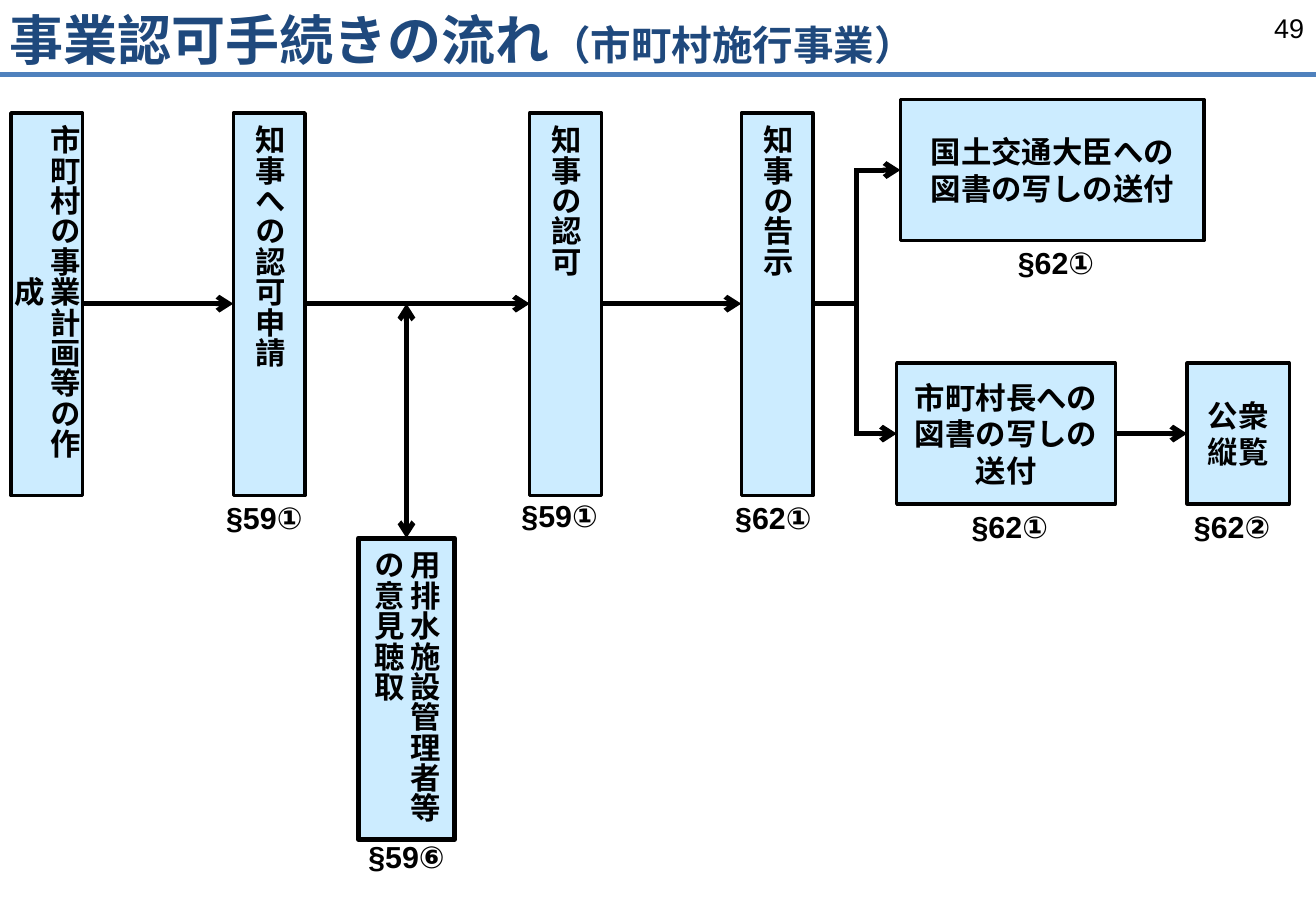
import pptx
import pptx.dml.color
import pptx.enum.shapes
import pptx.enum.text
import pptx.oxml.ns
import pptx.util
from lxml import etree

Inches = pptx.util.Inches
ALIGN = pptx.enum.text.PP_ALIGN
MIDDLE = pptx.enum.text.MSO_ANCHOR.MIDDLE
COLORS = {"title": "1F497D", "rule": "4F81BD", "ink": "000000", "step": "CCECFF"}
SLIDE_W, SLIDE_H = 10.83, 7.5
FLOW_Y = 2.5
STEP_TOP, STEP_W, STEP_H = 0.93, 0.59, 3.15
NOTICE_H = 1.16
NOTICE_TOP = 2.99
FORK_X = 7.05


def color(name):
    return pptx.dml.color.RGBColor.from_string(COLORS[name])


def add_run(paragraph, text, size, font="Arial", ink="ink", bold=True):
    run = paragraph.add_run()
    run.text = text
    run.font.size = pptx.util.Pt(size)
    run.font.name = font
    run.font.bold = bold
    run.font.color.rgb = color(ink)


def add_label(slide, box, text, size, align, bold=True, anchor=MIDDLE):
    label = slide.shapes.add_textbox(*map(Inches, box)).text_frame
    label.word_wrap = True
    label.vertical_anchor = anchor
    label.paragraphs[0].alignment = align
    add_run(label.paragraphs[0], text, size, bold=bold)


def add_line(slide, start, end, ink="ink", ends=()):
    """Draw a line; ends lists the arrowheads: headEnd at start, tailEnd at end."""
    line = slide.shapes.add_connector(
        pptx.enum.shapes.MSO_CONNECTOR.STRAIGHT, *map(Inches, (*start, *end)))
    line.line.color.rgb = color(ink)
    line.line.width = pptx.util.Pt(3)
    outline = line.line._get_or_add_ln()
    for end_tag in ends:
        etree.SubElement(outline, pptx.oxml.ns.qn(f"a:{end_tag}"), type="arrow")
    etree.SubElement(line.element.spPr, pptx.oxml.ns.qn("a:effectLst"))


def add_step(slide, box, lines, article=None, shift=(0, 0), vertical=False,
             align=ALIGN.CENTER, border=2):
    """Draw a step with its article number below, shifted from the centred place."""
    left, top, width, height = box
    step = slide.shapes.add_shape(
        pptx.enum.shapes.MSO_SHAPE.RECTANGLE, *map(Inches, box))
    step.shadow.inherit = False
    step.fill.solid()
    step.fill.fore_color.rgb = color("step")
    step.line.color.rgb = color("ink")
    step.line.width = pptx.util.Pt(border)
    frame = step.text_frame
    frame.word_wrap = True
    frame.vertical_anchor = MIDDLE
    if vertical:
        frame.margin_top = frame.margin_bottom = Inches(0.1)
        frame.margin_left = frame.margin_right = Inches(0.05)
        step.element.txBody.bodyPr.set("vert", "eaVert")
    for index, text in enumerate(lines):
        paragraph = frame.add_paragraph() if index else frame.paragraphs[0]
        paragraph.alignment = align
        add_run(paragraph, text, 18, "Times New Roman")
    if article:
        place = (left + width / 2 - 0.49 + shift[0], top + height + shift[1], 0.98, 0.36)
        add_label(slide, place, article, 18, ALIGN.CENTER)


def add_header(slide, box):
    left, top, width, height = box
    title = slide.shapes.title
    title.left, title.top, title.width, title.height = map(Inches, box)
    frame = title.text_frame
    frame.margin_left = Inches(0.08)
    frame.word_wrap = True
    frame.auto_size = pptx.enum.text.MSO_AUTO_SIZE.NONE
    frame.vertical_anchor = MIDDLE
    heading = frame.paragraphs[0]
    heading.alignment = ALIGN.LEFT
    add_run(heading, "事業認可手続きの流れ", 32, ink="title")
    add_run(heading, "（市町村施行事業）", 24, ink="title")
    rule_y = top + height - 0.03
    add_line(slide, (left, rule_y), (left + width, rule_y), "rule")
    add_label(slide, (left + width - 2.53, top + 0.05, 2.53, 0.4), "49", 16,
              ALIGN.RIGHT, bold=False, anchor=pptx.enum.text.MSO_ANCHOR.TOP)


def add_main_flow(slide):
    steps = [
        (0.09, "市町村の事業計画等の作成", None, (0, 0)),
        (1.92, "知事への認可申請", "§59①", (-0.04, 0)),
        (4.36, "知事の認可", "§59①", (-0.05, -0.02)),
        (6.1, "知事の告示", "§62①", (-0.03, 0)),
    ]
    for left, text, article, shift in steps:
        add_step(slide, (left, STEP_TOP, STEP_W, STEP_H), [text], article, shift, True)
    for before, after in zip(steps, steps[1:]):
        add_line(slide, (before[0] + STEP_W, FLOW_Y), (after[0], FLOW_Y), ends=["tailEnd"])


def add_hearing(slide, box):
    left, top, width, _ = box
    add_step(slide, box, ["用排水施設管理者等の意見聴取"], "§59⑥", (0, -0.04),
             True, ALIGN.LEFT, 3)
    center = left + width / 2
    add_line(slide, (center, FLOW_Y), (center, top), ends=["headEnd", "tailEnd"])


def add_notices(slide):
    minister = (7.41, 0.82, 2.5, NOTICE_H)
    mayor = (7.38, NOTICE_TOP, 1.8, NOTICE_H)
    public = (9.77, NOTICE_TOP, 0.84, NOTICE_H)
    add_step(slide, minister, ["国土交通大臣への", "図書の写しの送付"], "§62①", (0.03, 0))
    add_step(slide, mayor, ["市町村長への", "図書の写しの", "送付"], "§62①", (0.03, 0))
    add_step(slide, public, ["公衆縦覧"], "§62②", (-0.05, 0))
    minister_y, mayor_y = (box[1] + NOTICE_H / 2 for box in (minister, mayor))
    add_line(slide, (6.69, FLOW_Y), (FORK_X, FLOW_Y))
    add_line(slide, (FORK_X, minister_y), (FORK_X, mayor_y))
    for start_x, end_x, y in [(FORK_X - 0.02, minister[0], minister_y),
                              (FORK_X - 0.02, mayor[0], mayor_y),
                              (mayor[0] + mayor[2], public[0], mayor_y)]:
        add_line(slide, (start_x, y), (end_x, y), ends=["tailEnd"])


def main():
    deck = pptx.Presentation()
    deck.slide_width, deck.slide_height = Inches(SLIDE_W), Inches(SLIDE_H)
    slide = deck.slides.add_slide(deck.slide_layouts[5])
    add_header(slide, (0, 0, SLIDE_W, 0.64))
    add_main_flow(slide)
    add_hearing(slide, (2.95, 4.43, 0.79, 2.48))
    add_notices(slide)
    deck.save("out.pptx")


if __name__ == "__main__":
    main()
